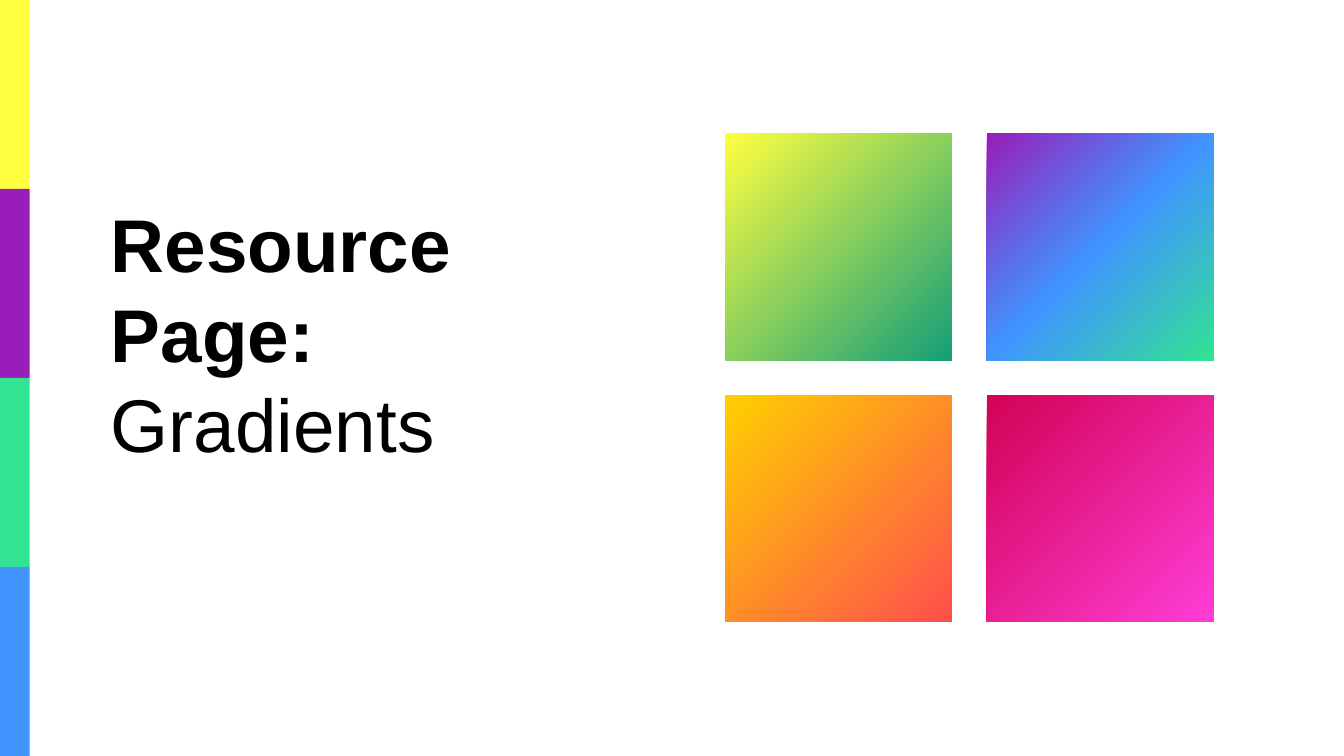
import pptx
import pptx.dml.color
import pptx.enum.shapes
import pptx.enum.text
import pptx.oxml
import pptx.oxml.ns
import pptx.util

COLORS = {
    "text": "000000",
    "yellow": "FFFF3F",
    "lemon": "FFFF40",
    "teal": "149E79",
    "purple": "981DB9",
    "blue": "4095FF",
    "green": "32E392",
    "gold": "FFD000",
    "coral": "FF4F4C",
    "crimson": "D20255",
    "pink": "FF3ED7",
}


class SlideBuilder:
    """Holds the style and the current slide; lengths are percent of the slide."""

    font = "Arial"
    size = pptx.util.Pt(80)
    leading = pptx.util.Pt(96)

    def __init__(self, deck):
        self.deck = deck
        self.page = deck.slides.add_slide(deck.slide_layouts[6])

    def place(self, left, top, width, height):
        wide, high = self.deck.slide_width, self.deck.slide_height
        return [round(share * side / 100) for share, side in
                ((left, wide), (top, high), (width, wide), (height, high))]

    def rectangle(self, *area):
        shape = self.page.shapes.add_shape(
            pptx.enum.shapes.MSO_SHAPE.RECTANGLE, *self.place(*area))
        shape.shadow.inherit = False
        shape.line.fill.background()
        return shape

    def bar(self, color, *area):
        fill = self.rectangle(*area).fill
        fill.solid()
        fill.fore_color.rgb = pptx.dml.color.RGBColor.from_string(COLORS[color])

    def gradient_tile(self, colors, *area):
        shape = self.rectangle(*area)
        shape.fill.gradient()
        shape.fill.gradient_angle = 315  # counter-clockwise: top left to bottom right
        # Evenly spaced stops, as many as there are colours
        stops = shape.element.spPr.find(".//" + pptx.oxml.ns.qn("a:gsLst"))
        for stop in list(stops):
            stops.remove(stop)
        for index, color in enumerate(colors):
            position = 100000 * index // (len(colors) - 1)
            stops.append(pptx.oxml.parse_xml(
                f'<a:gs {pptx.oxml.ns.nsdecls("a")} pos="{position}">'
                f'<a:srgbClr val="{COLORS[color]}"/></a:gs>'))

    def heading(self, lines, *area):
        frame = self.page.shapes.add_textbox(*self.place(*area)).text_frame
        frame.word_wrap = True
        frame.auto_size = pptx.enum.text.MSO_AUTO_SIZE.SHAPE_TO_FIT_TEXT
        frame.margin_left = frame.margin_right = 0
        frame.margin_top = frame.margin_bottom = 0
        for index, (text, bold) in enumerate(lines):
            para = frame.add_paragraph() if index else frame.paragraphs[0]
            para.text = text
            para.line_spacing = self.leading
            para.font.name = self.font
            para.font.size = self.size
            para.font.bold = bold
            para.font.color.rgb = pptx.dml.color.RGBColor.from_string(COLORS["text"])


def main():
    deck = pptx.Presentation()
    deck.slide_width = pptx.util.Inches(20)
    deck.slide_height = pptx.util.Inches(11.25)
    slide = SlideBuilder(deck)

    # Colour strip down the left edge
    for row, color in enumerate(("yellow", "purple", "green", "blue")):
        slide.bar(color, 0, 25 * row, 2.2, 25)

    # Two by two grid of gradient tiles
    tiles = (
        (("lemon", "teal"), ("purple", "blue", "green")),
        (("gold", "coral"), ("crimson", "pink")),
    )
    for row, pair in enumerate(tiles):
        for column, colors in enumerate(pair):
            slide.gradient_tile(colors, 53.95 + 19.47 * column,
                                17.65 + 34.61 * row, 16.88, 30)

    # Title
    slide.heading((("Resource Page:", True), ("Gradients", False)),
                  8.25, 26.22, 31.15, 35.91)

    deck.save("out.pptx")


if __name__ == "__main__":
    main()
